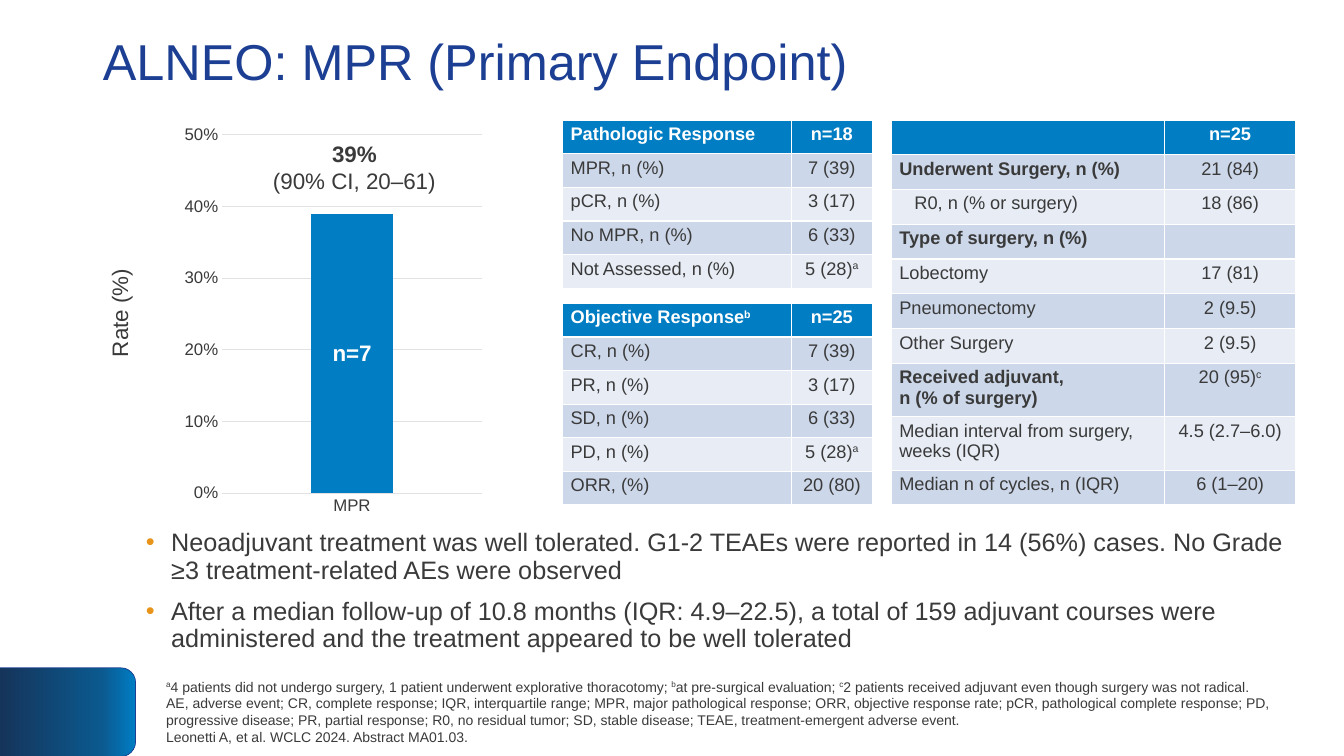
from copy import deepcopy
from dataclasses import dataclass
from typing import Any

from lxml.etree import SubElement
from pptx import Presentation
from pptx.chart.data import CategoryChartData
from pptx.dml.color import RGBColor
from pptx.enum.chart import XL_CHART_TYPE, XL_TICK_MARK
from pptx.enum.shapes import MSO_SHAPE
from pptx.enum.text import MSO_ANCHOR, MSO_AUTO_SIZE, PP_ALIGN
from pptx.oxml import parse_xml
from pptx.oxml.ns import nsdecls, qn
from pptx.util import Inches, Pt

NAVY = RGBColor(0x1C, 0x3F, 0x93)
BLUE = RGBColor(0x00, 0x7D, 0xC3)
MID_BLUE = RGBColor(0x0B, 0x59, 0x8F)
DARK_BLUE = RGBColor(0x15, 0x34, 0x5A)
BAND = RGBColor(0xCC, 0xD7, 0xE9)
PALE = RGBColor(0xE7, 0xEC, 0xF5)
TEXT = RGBColor(0x3A, 0x3A, 0x3A)
GRID = RGBColor(0xE1, 0xE1, 0xE1)
ORANGE = RGBColor(0xE8, 0x93, 0x1A)
WHITE = RGBColor(0xFF, 0xFF, 0xFF)

TITLE = "ALNEO: MPR (Primary Endpoint)"
BULLETS = [
    "Neoadjuvant treatment was well tolerated. G1-2 TEAEs were reported in 14 (56%) cases. "
    "No Grade ≥3 treatment-related AEs were observed",
    "After a median follow-up of 10.8 months (IQR: 4.9–22.5), a total of 159 adjuvant courses "
    "were administered and the treatment appeared to be well tolerated",
]
FOOTNOTES = [
    "^a^4 patients did not undergo surgery, 1 patient underwent explorative thoracotomy; "
    "^b^at pre-surgical evaluation; "
    "^c^2 patients received adjuvant even though surgery was not radical.",
    "AE, adverse event; CR, complete response; IQR, interquartile range; MPR, major pathological "
    "response; ORR, objective response rate; pCR, pathological complete response; PD, progressive "
    "disease; PR, partial response; R0, no residual tumor; SD, stable disease; TEAE, "
    "treatment-emergent adverse event.\nLeonetti A, et al. WCLC 2024. Abstract MA01.03.",
]


@dataclass
class Row:
    """One table row; text between carets is superscript."""
    label: str
    value: str
    bold: bool = False
    indent: float = 0
    tall: bool = False


@dataclass
class Grid:
    """A two-column table with its place in inches."""
    box: tuple[float, float, float, float]
    value_width: float
    rows: list[Row]


@dataclass
class Label:
    """A text box with its place in inches."""
    box: tuple[float, float, float, float]
    lines: list[str]
    size: float = 16
    color: RGBColor = TEXT
    bold_first: bool = False
    align: PP_ALIGN = PP_ALIGN.LEFT
    frame: dict[str, Any] | None = None
    rotation: float = 0


GRIDS = [
    Grid((5.58, 1.19, 3.07, 1.67), 0.8, [
        Row("Pathologic Response", "n=18"),
        Row("MPR, n (%)", "7 (39)"),
        Row("pCR, n (%)", "3 (17)"),
        Row("No MPR, n (%)", "6 (33)"),
        Row("Not Assessed, n (%)", "5 (28)^a^"),
    ]),
    Grid((5.58, 3.01, 3.07, 2), 0.8, [
        Row("Objective Response^b^", "n=25"),
        Row("CR, n (%)", "7 (39)"),
        Row("PR, n (%)", "3 (17)"),
        Row("SD, n (%)", "6 (33)"),
        Row("PD, n (%)", "5 (28)^a^"),
        Row("ORR, (%)", "20 (80)"),
    ]),
    Grid((8.84, 1.19, 4.01, 3.82), 1.3, [
        Row("", "n=25"),
        Row("Underwent Surgery, n (%)", "21 (84)", bold=True),
        Row("R0, n (% or surgery)", "18 (86)", indent=0.15),
        Row("Type of surgery, n (%)", "", bold=True),
        Row("Lobectomy", "17 (81)"),
        Row("Pneumonectomy", "2 (9.5)"),
        Row("Other Surgery", "2 (9.5)"),
        Row("Received adjuvant,\nn (% of surgery)", "20 (95)^c^", bold=True, tall=True),
        Row("Median interval from surgery, weeks (IQR)", "4.5 (2.7–6.0)", tall=True),
        Row("Median n of cycles, n (IQR)", "6 (1–20)"),
    ]),
]
FIT = {"auto_size": MSO_AUTO_SIZE.SHAPE_TO_FIT_TEXT}
LABELS = [
    Label((1.55, 6.62, 11.65, 0.88), FOOTNOTES, 10, frame={"vertical_anchor": MSO_ANCHOR.MIDDLE}),
    Label((0.64, 2.91, 1.09, 0.37), ["Rate (%)"], frame={**FIT, "word_wrap": False}, rotation=270),
    Label((3.2, 3.32, 0.63, 0.37), ["n=7"], color=WHITE, bold_first=True, frame=FIT),
    Label((2.6, 1.34, 1.83, 0.64), ["39%", "(90% CI, 20–61)"], bold_first=True,
          align=PP_ALIGN.CENTER, frame=FIT),
]


def apply(target: Any, values: dict[str, Any]) -> None:
    """Set each named attribute on the target."""
    for name, value in values.items():
        setattr(target, name, value)


def style(font: Any, size: float, color: RGBColor = TEXT, bold: bool = False) -> None:
    """Format a font."""
    apply(font, {"name": "Arial", "size": Pt(size), "bold": bold})
    font.color.rgb = color


def write(p: Any, text: str, size: float, color: RGBColor = TEXT, bold: bool = False) -> None:
    """Fill a paragraph with runs, line breaks and superscripts."""
    if not text:
        SubElement(p._p, qn("a:endParaRPr"), sz=str(size * 100))
    for n, line in enumerate(text.split("\n")):
        if n:
            p.add_line_break()
            p._p[-1].append(deepcopy(p.runs[-1]._r.rPr))
        for i, part in enumerate(line.split("^")):
            if part:
                r = p.add_run()
                r.text = part
                style(r.font, size, color, bold)
                if i % 2:
                    r.font._element.set("baseline", "30000")


def next_paragraph(tf: Any, n: int) -> Any:
    """Return the first paragraph, or a new one after it."""
    return tf.add_paragraph() if n else tf.paragraphs[0]


def add_label(s: Any, label: Label) -> None:
    """Draw a text box."""
    sp = s.shapes.add_textbox(*map(Inches, label.box))
    sp.rotation = label.rotation
    apply(sp.text_frame, {"word_wrap": True, **(label.frame or {})})
    for n, line in enumerate(label.lines):
        p = next_paragraph(sp.text_frame, n)
        p.alignment = label.align
        write(p, line, label.size, label.color, label.bold_first and n == 0)


def add_bullets(s: Any) -> None:
    """Draw the bulleted findings."""
    tf = s.shapes.add_textbox(*map(Inches, (1.35, 5.21, 11.5, 1.57))).text_frame
    tf.word_wrap = True
    for n, text in enumerate(BULLETS):
        p = next_paragraph(tf, n)
        pPr = p._p.get_or_add_pPr()
        pPr.set("marL", str(Inches(0.25)))
        pPr.set("indent", str(-Inches(0.25)))
        SubElement(SubElement(pPr, qn("a:buClr")), qn("a:srgbClr"), val=str(ORANGE))
        SubElement(pPr, qn("a:buFont"), typeface="Arial")
        SubElement(pPr, qn("a:buChar"), char="•")
        apply(p, {"line_spacing": 0.9, "space_before": Pt(10 if n else 0)})
        write(p, text, 18)


def add_grid(s: Any, grid: Grid) -> None:
    """Draw a banded two-column table."""
    table = s.shapes.add_table(len(grid.rows), 2, *map(Inches, grid.box)).table
    table.horz_banding = False
    width, height = grid.box[2:]
    table.columns[0].width = Inches(width - grid.value_width)
    table.columns[1].width = Inches(grid.value_width)
    tall = sum(row.tall for row in grid.rows)
    single = (height - tall * 0.53) / (len(grid.rows) - tall)
    for n, row in enumerate(grid.rows):
        table.rows[n].height = Inches(0.53 if row.tall else single)
        for col, text in enumerate((row.label, row.value)):
            cell = table.cell(n, col)
            apply(cell, {"margin_left": Inches(0.08 + (0 if col else row.indent)),
                         "margin_right": Inches(0.08),
                         "margin_top": Inches(0.04), "margin_bottom": Inches(0.04)})
            cell.fill.solid()
            cell.fill.fore_color.rgb = (BAND if n % 2 else PALE) if n else BLUE
            for i, side in enumerate("LRTB"):
                cell._tc.tcPr.insert(i, parse_xml(
                    f'<a:ln{side} {nsdecls("a")} w="12700"><a:solidFill>'
                    f'<a:srgbClr val="{WHITE}"/></a:solidFill></a:ln{side}>'))
            p = cell.text_frame.paragraphs[0]
            p.alignment = PP_ALIGN.CENTER if col else PP_ALIGN.LEFT
            write(p, text, 13, TEXT if n else WHITE, n == 0 or (row.bold and col == 0))


def add_rate_chart(s: Any) -> None:
    """Draw the MPR column chart."""
    data = CategoryChartData(number_format="0%")
    data.categories = ["MPR"]
    data.add_series("Series 1", [0.39])
    box = map(Inches, (1.77, 1.17, 3.07, 4.02))
    chart = s.shapes.add_chart(XL_CHART_TYPE.COLUMN_CLUSTERED, *box, data).chart
    apply(chart, {"has_legend": False, "has_title": False})
    style(chart.font, 12)
    apply(chart.plots[0], {"gap_width": 219, "overlap": -27, "vary_by_categories": False})
    fill = chart.plots[0].series[0].format.fill
    fill.solid()
    fill.fore_color.rgb = BLUE
    values, cats = chart.value_axis, chart.category_axis
    for axis in (values, cats):
        axis.major_tick_mark = XL_TICK_MARK.NONE
        style(axis.tick_labels.font, 12)
    apply(values, {"minimum_scale": 0, "maximum_scale": 0.5, "major_unit": 0.1})
    apply(values.tick_labels, {"number_format": "0%", "number_format_is_linked": False})
    values.format.line.fill.background()
    for line in (values.major_gridlines.format.line, cats.format.line):
        line.color.rgb = GRID
        line.width = Pt(0.75)


def add_corner(s: Any) -> None:
    """Draw the gradient tab in the bottom left corner."""
    sp = s.shapes.add_shape(MSO_SHAPE.ROUND_2_SAME_RECTANGLE, *map(Inches, (0.23, 6.39, 0.88, 1.35)))
    sp.rotation = 90
    sp.shadow.inherit = False
    sp.line.color.rgb = NAVY
    sp.line.width = Pt(0.5)
    sp.fill.gradient()
    sp.fill.gradient_angle = 270
    stops = sp._element.spPr.find(".//" + qn("a:gsLst"))
    stops.insert(1, deepcopy(stops[0]))
    for stop, (position, color) in zip(sp.fill.gradient_stops,
                                       ((0, BLUE), (0.25, MID_BLUE), (1, DARK_BLUE))):
        stop.position = position
        stop.color.rgb = color


def main() -> None:
    """Build the slide and save it."""
    prs = Presentation()
    apply(prs, {"slide_width": Inches(13.33), "slide_height": Inches(7.5)})
    s = prs.slides.add_slide(prs.slide_layouts[5])
    add_corner(s)
    title = s.shapes.title
    apply(title, dict(zip(("left", "top", "width", "height"), map(Inches, (0.92, 0.22, 11.5, 0.84)))))
    apply(title.text_frame, {"vertical_anchor": MSO_ANCHOR.MIDDLE, "auto_size": MSO_AUTO_SIZE.NONE})
    p = title.text_frame.paragraphs[0]
    apply(p, {"alignment": PP_ALIGN.LEFT, "line_spacing": 0.9})
    write(p, TITLE, 36, NAVY)
    add_bullets(s)
    for grid in GRIDS:
        add_grid(s, grid)
    add_rate_chart(s)
    for label in LABELS:
        add_label(s, label)
    prs.save("out.pptx")


if __name__ == "__main__":
    main()
